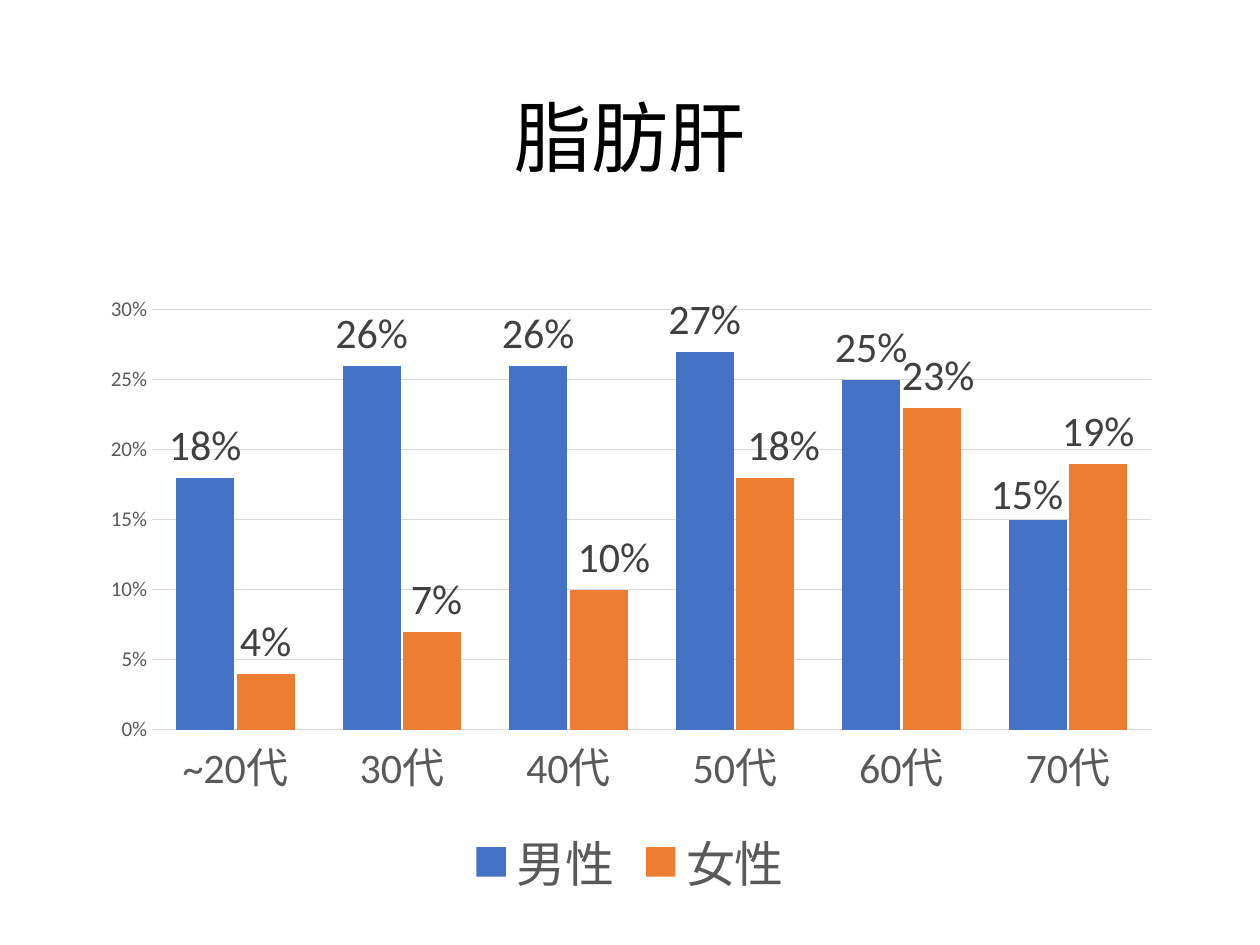
from dataclasses import dataclass

from lxml import etree
from pptx import Presentation
from pptx.chart.data import CategoryChartData
from pptx.dml.color import RGBColor
from pptx.enum.chart import XL_CHART_TYPE, XL_LABEL_POSITION, XL_LEGEND_POSITION, XL_TICK_MARK
from pptx.enum.text import MSO_ANCHOR, PP_ALIGN
from pptx.oxml.ns import qn
from pptx.util import Inches, Pt

COLUMNS = XL_CHART_TYPE.COLUMN_CLUSTERED
BOTTOM = XL_LEGEND_POSITION.BOTTOM
OUTSIDE = XL_LABEL_POSITION.OUTSIDE_END
NO_TICK = XL_TICK_MARK.NONE
CENTER = PP_ALIGN.CENTER
MIDDLE = MSO_ANCHOR.MIDDLE
TITLE_ONLY = 5


@dataclass(frozen=True)
class Theme:
    latin: str = "Calibri"
    japanese: str = "Noto Sans CJK JP"
    black: str = "000000"
    axis_text: str = "595959"
    label_text: str = "404040"
    rule: str = "D9D9D9"
    series: tuple = ("4472C4", "ED7D31")
    title_size: int = 44
    legend_size: int = 28
    label_size: int = 24
    scale_size: int = 12
    base_size: int = 10


class SlideBuilder:
    def __init__(self, deck, theme):
        self.theme = theme
        self.page = deck.slides.add_slide(deck.slide_layouts[TITLE_ONLY])

    def style_font(self, font, size, color, name=None):
        font.size = Pt(size)
        font.bold = False
        font.name = name or self.theme.latin
        font.color.rgb = RGBColor.from_string(color)
        # East Asian typeface follows the latin one
        latin = font._element.find(qn("a:latin"))
        east_asian = etree.Element(qn("a:ea"), typeface=self.theme.japanese)
        latin.addnext(east_asian)

    def style_line(self, line):
        line.color.rgb = RGBColor.from_string(self.theme.rule)
        line.width = Pt(0.75)

    def title(self, text, left, top, width, height):
        box = self.page.shapes.title
        box.left, box.top = Inches(left), Inches(top)
        box.width, box.height = Inches(width), Inches(height)
        box.text_frame.vertical_anchor = MIDDLE
        para = box.text_frame.paragraphs[0]
        para.alignment = CENTER
        para.line_spacing = 0.9
        span = para.add_run()
        span.text = text
        self.style_font(span.font, self.theme.title_size, self.theme.black, self.theme.japanese)

    def column_chart(self, categories, groups, left, top, width, height):
        data = CategoryChartData(number_format="0%")
        data.categories = categories
        for name, values in groups.items():
            data.add_series(name, values)
        chart = self.page.shapes.add_chart(
            COLUMNS, Inches(left), Inches(top), Inches(width), Inches(height), data).chart
        chart.has_title = False
        self.style_font(chart.font, self.theme.base_size, self.theme.black)
        self.style_axes(chart)
        self.style_columns(chart.plots[0])
        # Legend
        chart.has_legend = True
        chart.legend.position = BOTTOM
        chart.legend.include_in_layout = False
        self.style_font(chart.legend.font, self.theme.legend_size,
                        self.theme.axis_text, self.theme.japanese)
        return chart

    def style_axes(self, chart):
        theme = self.theme
        sizes = ((chart.category_axis, theme.label_size), (chart.value_axis, theme.scale_size))
        for axis, size in sizes:
            axis.major_tick_mark = axis.minor_tick_mark = NO_TICK
            self.style_font(axis.tick_labels.font, size, theme.axis_text)
        self.style_line(chart.category_axis.format.line)
        scale = chart.value_axis
        scale.minimum_scale, scale.maximum_scale, scale.major_unit = 0, 0.3, 0.05
        scale.tick_labels.number_format = "0%"
        scale.tick_labels.number_format_is_linked = False
        scale.format.line.fill.background()
        scale.has_major_gridlines = True
        self.style_line(scale.major_gridlines.format.line)

    def style_columns(self, plot):
        plot.gap_width, plot.overlap = 82, -4
        plot.vary_by_categories = False
        for series, color in zip(plot.series, self.theme.series):
            series.format.fill.solid()
            series.format.fill.fore_color.rgb = RGBColor.from_string(color)
            labels = series.data_labels
            labels.show_value = True
            labels.number_format, labels.number_format_is_linked = "0%", False
            labels.position = OUTSIDE
            self.style_font(labels.font, self.theme.label_size, self.theme.label_text)

    def shift_label(self, series, index, across, down):
        label = series.points[index].data_label
        self.style_font(label.font, self.theme.label_size, self.theme.label_text)
        label.position = OUTSIDE
        mark = series._element.xpath(f"c:dLbls/c:dLbl/c:idx[@val='{index}']")[0]
        mark.addnext(manual_layout(x=across, y=down))

    def place_plot(self, chart, **place):
        area = chart._chartSpace.xpath("c:chart/c:plotArea")[0]
        for old in area.findall(qn("c:layout")):
            area.remove(old)
        area.insert(0, manual_layout(layoutTarget="inner", xMode="edge", yMode="edge", **place))


def manual_layout(**settings):
    layout = etree.Element(qn("c:layout"))
    manual = etree.SubElement(layout, qn("c:manualLayout"))
    for name, value in settings.items():
        etree.SubElement(manual, qn(f"c:{name}"), val=str(value))
    return layout


def main():
    deck = Presentation()
    deck.slide_width, deck.slide_height = Inches(10), Inches(7.5)
    builder = SlideBuilder(deck, Theme())

    # Heading
    builder.title("脂肪肝", 0.69, 0.4, 8.62, 1.45)

    # Share by age group and sex
    ages = ["~20代"] + [f"{age}代" for age in range(30, 80, 10)]
    shares = {
        "男性": (0.18, 0.26, 0.26, 0.27, 0.25, 0.15),
        "女性": (0.04, 0.07, 0.10, 0.18, 0.23, 0.19),
    }
    chart = builder.column_chart(ages, shares, 0.69, 2.26, 8.62, 4.94)
    builder.place_plot(chart, x=0.06, y=0.04, w=0.92, h=0.675)

    # Labels nudged off their columns: point, across, down
    men, women = chart.plots[0].series
    builder.shift_label(men, 5, -0.01, 0.01)
    for index, across in ((1, 0.004), (2, 0.014), (3, 0.017), (4, 0.006)):
        builder.shift_label(women, index, across, 0)

    deck.save("out.pptx")


if __name__ == "__main__":
    main()
